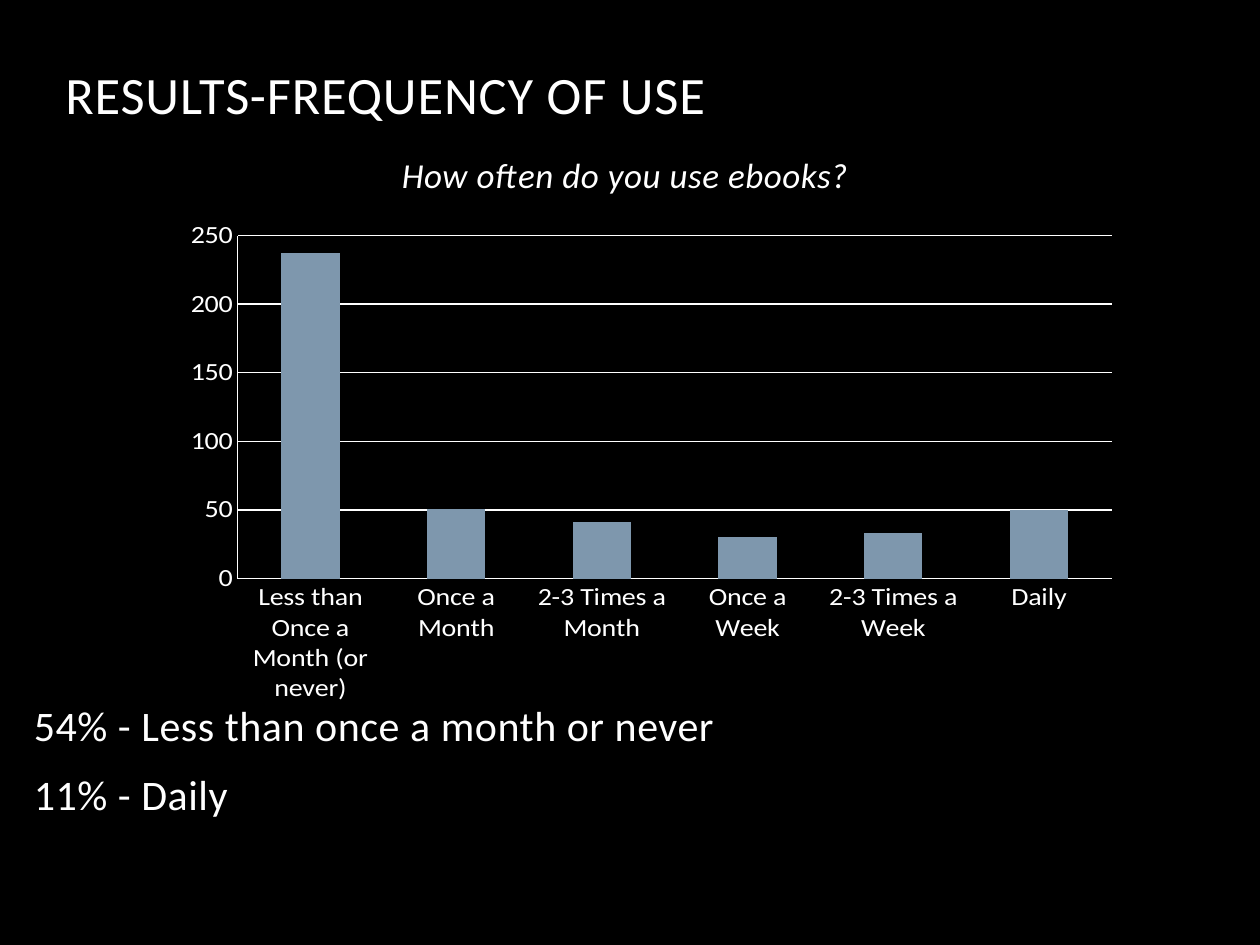
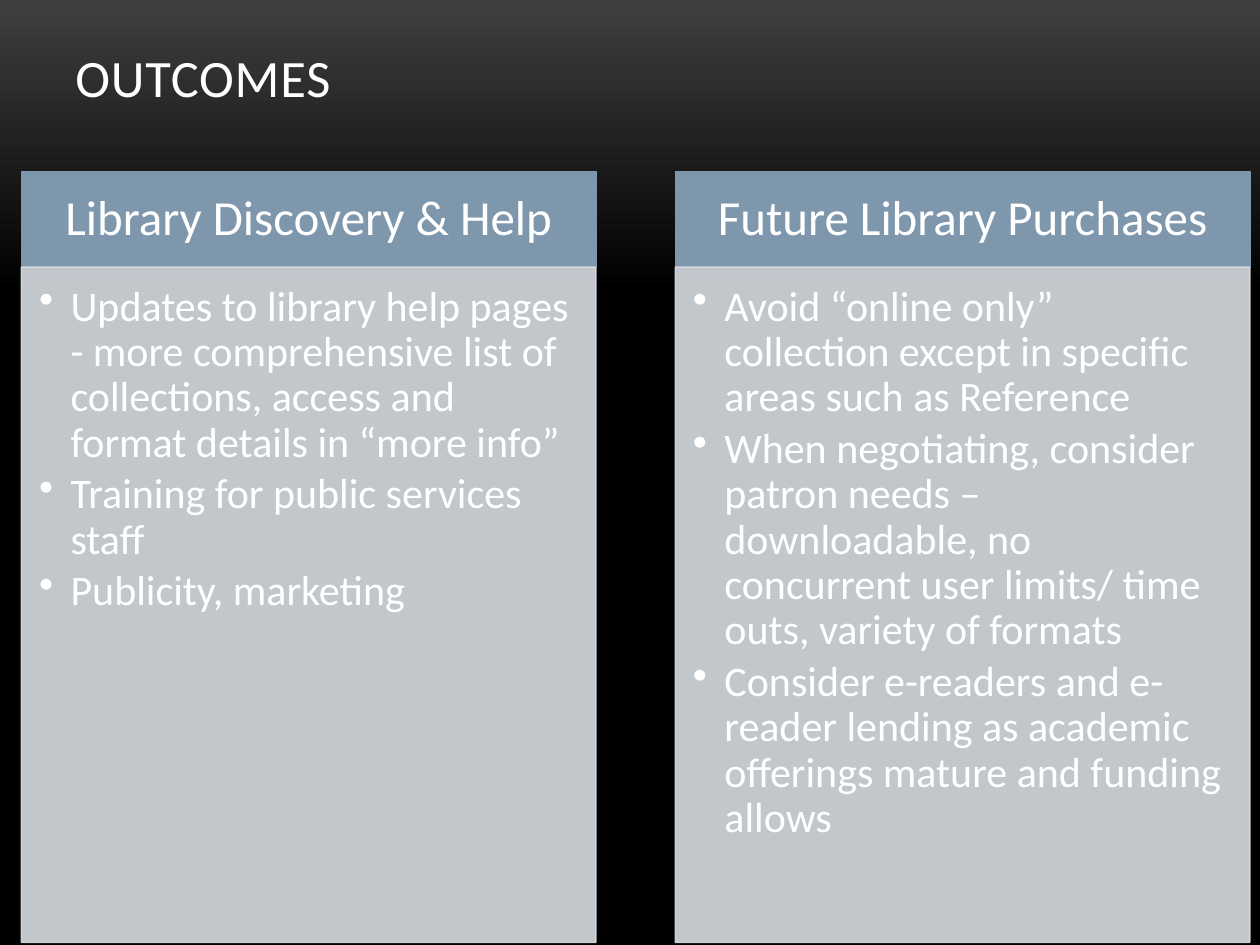
from lxml import etree
from pptx import Presentation
from pptx.chart.data import CategoryChartData
from pptx.dml.color import RGBColor
from pptx.enum.chart import XL_CHART_TYPE, XL_TICK_MARK
from pptx.enum.shapes import MSO_SHAPE
from pptx.enum.text import MSO_ANCHOR, PP_ALIGN
from pptx.oxml import parse_xml
from pptx.oxml.ns import nsdecls, qn
from pptx.util import Inches, Pt

COLORS = {"black": "000000", "gray": "3F3F3F", "white": "FFFFFF",
          "blue": "7E97AD", "pale": "D8DDE3"}
FONT = "Calibri"


def rgb(name):
    return RGBColor.from_string(COLORS[name])


def style_font(font, size, italic=False):
    font.name, font.size, font.italic = FONT, Pt(size), italic
    font.color.rgb = rgb("white")


def write_text(tf, lines, size=24, italic=False, spacing=0, align=PP_ALIGN.LEFT,
               anchor=MSO_ANCHOR.TOP, insets=(0.1, 0.05, 0.1, 0.05),
               line=1.0, before=0, after=0, bullet=False):
    """Fill a text frame with one paragraph for each line."""
    tf.word_wrap = True
    tf.vertical_anchor = anchor
    (tf.margin_left, tf.margin_top,
     tf.margin_right, tf.margin_bottom) = [Inches(i) for i in insets]
    for i, text in enumerate(lines):
        p = tf.paragraphs[0] if i == 0 else tf.add_paragraph()
        p.alignment, p.line_spacing = align, line
        p.space_before, p.space_after = Pt(before if i else 0), Pt(after)
        if bullet:
            pPr = p._p.get_or_add_pPr()
            pPr.set("marL", str(Inches(0.25)))
            pPr.set("indent", str(-Inches(0.25)))
            pPr.append(parse_xml(f'<a:buChar {nsdecls("a")} char="•"/>'))
        r = p.add_run()
        r.text = text
        style_font(r.font, size, italic)
        if spacing:
            r._r.get_or_add_rPr().set("spc", str(round(spacing * 100)))


def add_text(s, box, lines, **fmt):
    tb = s.shapes.add_textbox(*[Inches(v) for v in box])
    write_text(tb.text_frame, lines, **fmt)


def add_title(s, box, text):
    add_text(s, box, [text], size=30, spacing=0.5, anchor=MSO_ANCHOR.BOTTOM)


def add_panel(s, box, color, lines, alpha=100, **fmt):
    sp = s.shapes.add_shape(MSO_SHAPE.RECTANGLE, *[Inches(v) for v in box])
    sp.shadow.inherit = False
    sp.fill.solid()
    sp.fill.fore_color.rgb = rgb(color)
    sp.line.color.rgb = rgb(color)
    sp.line.width = Pt(0.85)
    if alpha < 100:
        for clr in sp._element.spPr.iter(qn("a:srgbClr")):
            etree.SubElement(clr, qn("a:alpha")).set("val", str(alpha * 1000))
    write_text(sp.text_frame, lines, **fmt)


def add_column(s, box, heading, points):
    """A heading bar on top of a bulleted panel."""
    x, y, w, h = box
    bar = 0.76
    add_panel(s, (x, y, w, bar), "blue", [heading], size=28, line=0.9,
              align=PP_ALIGN.CENTER, anchor=MSO_ANCHOR.MIDDLE,
              insets=(0.22, 0.12, 0.22, 0.12))
    add_panel(s, (x, y + bar, w, h - bar), "pale", points, alpha=90, line=0.9,
              after=3.6, bullet=True, insets=(0.14, 0.14, 0.19, 0.21))


def add_usage_chart(s, box, counts):
    data = CategoryChartData()
    data.categories = list(counts)
    data.add_series("Series 1", list(counts.values()))
    chart = s.shapes.add_chart(XL_CHART_TYPE.COLUMN_CLUSTERED,
                               *[Inches(v) for v in box], data).chart
    chart.has_legend = chart.has_title = False
    style_font(chart.font, 10)
    plot = chart.plots[0]
    plot.gap_width, plot.vary_by_categories = 150, False
    fill = plot.series[0].format.fill
    fill.solid()
    fill.fore_color.rgb = rgb("blue")

    for axis in (chart.category_axis, chart.value_axis):
        axis.major_tick_mark = axis.minor_tick_mark = XL_TICK_MARK.NONE
        style_font(axis.tick_labels.font, 16)
        axis.format.line.color.rgb = rgb("white")
    values = chart.value_axis
    values.minimum_scale, values.maximum_scale, values.major_unit = 0, 250, 50
    values.has_major_gridlines = True
    values.major_gridlines.format.line.color.rgb = rgb("white")

    # Fixed inner plot area
    area = chart._chartSpace.chart.plotArea
    for old in area.findall(qn("c:layout")):
        area.remove(old)
    layout = etree.Element(qn("c:layout"))
    manual = etree.SubElement(layout, qn("c:manualLayout"))
    for tag, val in (("layoutTarget", "inner"), ("xMode", "edge"), ("yMode", "edge"),
                     ("x", "0.084"), ("y", "0.024"), ("w", "0.916"), ("h", "0.808")):
        etree.SubElement(manual, qn(f"c:{tag}")).set("val", val)
    area.insert(0, layout)


def frequency_slide(s):
    s.background.fill.solid()
    s.background.fill.fore_color.rgb = rgb("black")
    add_title(s, (0.42, 0.17, 8.67, 0.87), "RESULTS-FREQUENCY OF USE")
    # Question, chart and findings
    add_text(s, (0.17, 1.17, 9.58, 0.5), ["How often do you use ebooks?"],
             size=20, italic=True, spacing=0.3, align=PP_ALIGN.CENTER)
    add_usage_chart(s, (1.25, 1.75, 7.58, 3.83), {
        "Less than Once a Month (or never)": 237, "Once a Month": 51,
        "2-3 Times a Month": 41, "Once a Week": 30,
        "2-3 Times a Week": 33, "Daily": 50})
    add_text(s, (0.17, 5.5, 9.58, 1.75),
             ["54% - Less than once a month or never", "11% - Daily"],
             spacing=0.3, before=4.8, after=6)


def outcomes_slide(s):
    # Gray fading down to black
    fill = s.background.fill
    fill.gradient()
    fill.gradient_angle = 270
    for stop, color, pos in zip(fill.gradient_stops, ("gray", "black"), (0, 0.31)):
        stop.color.rgb = rgb(color)
        stop.position = pos
    add_title(s, (0.5, 0.08, 9, 0.83), "OUTCOMES")
    columns = {
        "Library Discovery & Help": [
            "Updates to library help pages - more comprehensive list of collections, "
            "access and format details in “more info”",
            "Training for public services staff",
            "Publicity, marketing"],
        "Future Library Purchases": [
            "Avoid “online only” collection except in specific areas such as Reference",
            "When negotiating, consider patron needs –downloadable, no concurrent "
            "user limits/ time outs, variety of formats",
            "Consider e-readers and e-reader lending as academic offerings mature "
            "and funding allows"]}
    for i, (heading, points) in enumerate(columns.items()):
        add_column(s, (0.17 + i * 5.19, 1.36, 4.56, 6.12), heading, points)


def main():
    prs = Presentation()
    prs.slide_width, prs.slide_height = Inches(10), Inches(7.5)
    for build in (frequency_slide, outcomes_slide):
        build(prs.slides.add_slide(prs.slide_layouts[6]))
    prs.save("out.pptx")


if __name__ == "__main__":
    main()
